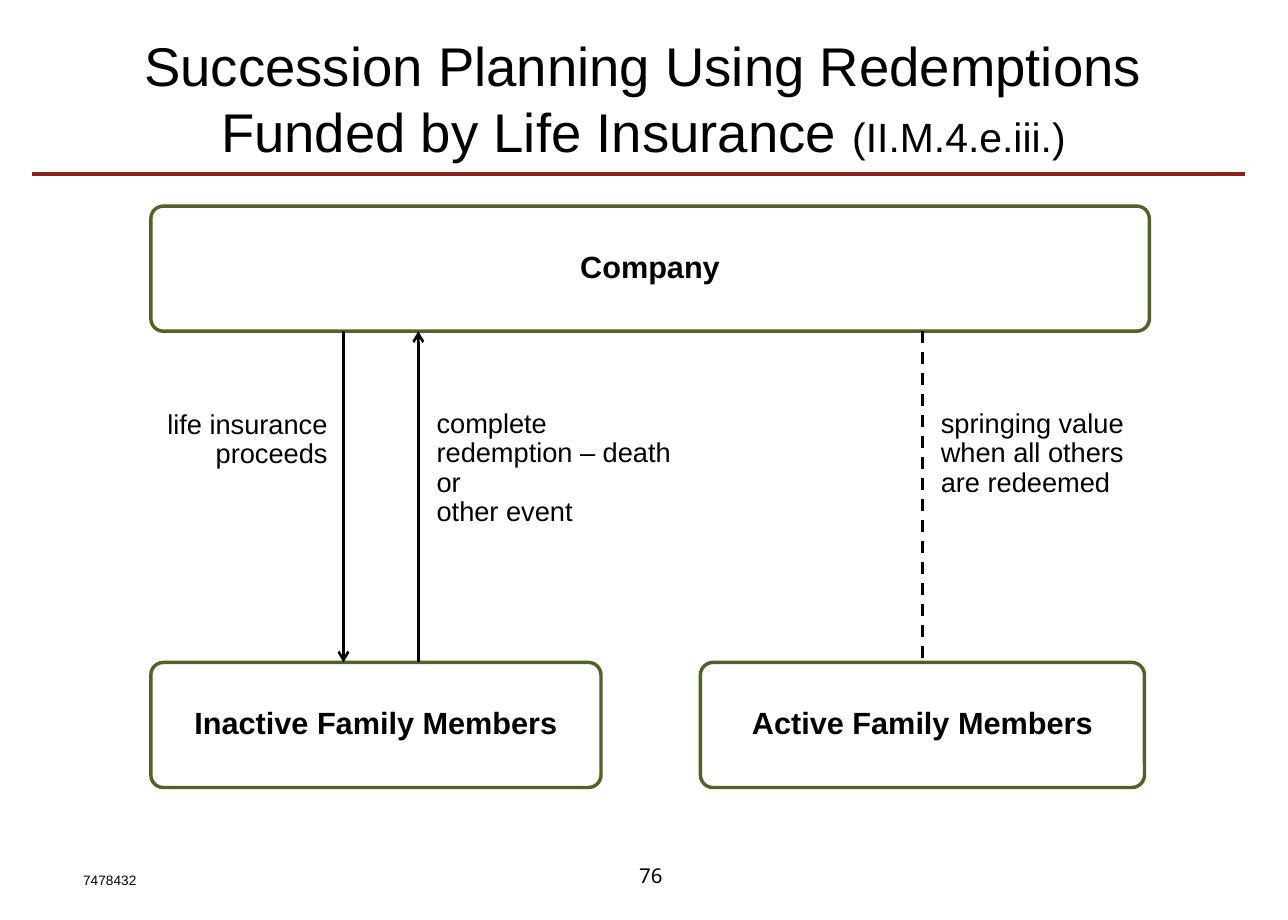
from lxml import etree
from pptx import Presentation
from pptx.dml.color import RGBColor
from pptx.enum.dml import MSO_LINE
from pptx.enum.shapes import MSO_CONNECTOR, MSO_SHAPE
from pptx.enum.text import MSO_ANCHOR, PP_ALIGN
from pptx.oxml.ns import qn
from pptx.util import Inches, Pt

COLORS = {"text": "000000", "fill": "FFFFFF", "border": "4F6228", "rule": "87251B"}


class Diagram:
    """Hold the slide and draw its boxes, labels and lines in one style."""

    def __init__(self, slide, font="Arial"):
        self.slide = slide
        self.font = font

    def color(self, name):
        return RGBColor.from_string(COLORS[name])

    def run(self, p, text, size, bold=False, font=None):
        r = p.add_run()
        r.text = text
        r.font.name = font or self.font
        r.font.size = Pt(size)
        r.font.bold = bold
        r.font.color.rgb = self.color("text")

    def text(self, x, y, w, h, runs, align=PP_ALIGN.LEFT,
             anchor=MSO_ANCHOR.TOP, font=None):
        sp = self.slide.shapes.add_textbox(Inches(x), Inches(y), Inches(w), Inches(h))
        tf = sp.text_frame
        tf.word_wrap = True
        tf.vertical_anchor = anchor
        p = tf.paragraphs[0]
        p.alignment = align
        for text, size in runs:
            self.run(p, text, size, font=font)
        return tf

    def label(self, x, y, w, h, lines, align=PP_ALIGN.LEFT):
        tf = self.text(x, y, w, h, [], align)
        tf.margin_left = tf.margin_right = Inches(0.15)
        tf.margin_top = Inches(0.1)
        p = tf.paragraphs[0]
        p.line_spacing = 0.9
        for i, line in enumerate(lines):
            if i:
                p.add_line_break()
            self.run(p, line, 16)

    def box(self, x, y, w, text, h=1.02):
        sp = self.slide.shapes.add_shape(
            MSO_SHAPE.ROUNDED_RECTANGLE, Inches(x), Inches(y), Inches(w), Inches(h))
        sp.adjustments[0] = 0.1
        sp.shadow.inherit = False
        sp.fill.solid()
        sp.fill.fore_color.rgb = self.color("fill")
        sp.line.color.rgb = self.color("border")
        sp.line.width = Pt(2)
        tf = sp.text_frame
        tf.word_wrap = True
        tf.vertical_anchor = MSO_ANCHOR.MIDDLE
        p = tf.paragraphs[0]
        p.alignment = PP_ALIGN.CENTER
        p.line_spacing = 0.9
        self.run(p, text, 18, bold=True)
        return sp

    def line(self, x1, y1, x2, y2, width, color="text", arrow=False, dash=None):
        c = self.slide.shapes.add_connector(
            MSO_CONNECTOR.STRAIGHT, Inches(x1), Inches(y1), Inches(x2), Inches(y2))
        c.line.color.rgb = self.color(color)
        c.line.width = Pt(width)
        if dash:
            c.line.dash_style = dash
        if arrow:
            etree.SubElement(c.line._get_or_add_ln(), qn("a:tailEnd"), type="arrow")
        etree.SubElement(c._element.spPr, qn("a:effectLst"))
        return c


def main():
    prs = Presentation()
    prs.slide_width, prs.slide_height = Inches(10.5), Inches(7.5)
    s = Diagram(prs.slides.add_slide(prs.slide_layouts[6]))

    s.line(0.26, 1.42, 10.15, 1.42, 2.75, "rule")
    s.text(0.52, 0.17, 9.45, 1.25,
           [("Succession Planning Using Redemptions Funded by Life Insurance ", 32),
            ("(II.M.4.e.iii.)", 24)], PP_ALIGN.CENTER, MSO_ANCHOR.MIDDLE)
    s.text(4.97, 6.94, 0.53, 0.4, [("76", 12)], PP_ALIGN.RIGHT,
           MSO_ANCHOR.MIDDLE, "Noto Sans")
    s.text(0.58, 7.06, 1.93, 0.24, [("7478432", 8)])

    top, bottom = 2.7, 5.4
    s.box(1.23, 1.68, 8.14, "Company")
    s.box(1.23, bottom, 3.67, "Inactive Family Members")
    active = s.box(5.71, bottom, 3.62, "Active Family Members")

    s.line(2.8, top, 2.8, bottom, 1.5, arrow=True)
    s.line(3.41, bottom, 3.41, top, 1.5, arrow=True)
    springing = s.line(7.52, top, 7.52, bottom, 1.75, dash=MSO_LINE.DASH)
    springing.end_connect(active, 0)

    s.label(0.68, 3.25, 2.14, 0.95, ["life insurance", "proceeds"], PP_ALIGN.RIGHT)
    s.label(3.41, 3.24, 2.27, 1.68, ["complete redemption – death or ", "other event"])
    s.label(7.52, 3.24, 2.28, 1.68, ["springing value when all others ", "are redeemed"])

    prs.save("out.pptx")


if __name__ == "__main__":
    main()
